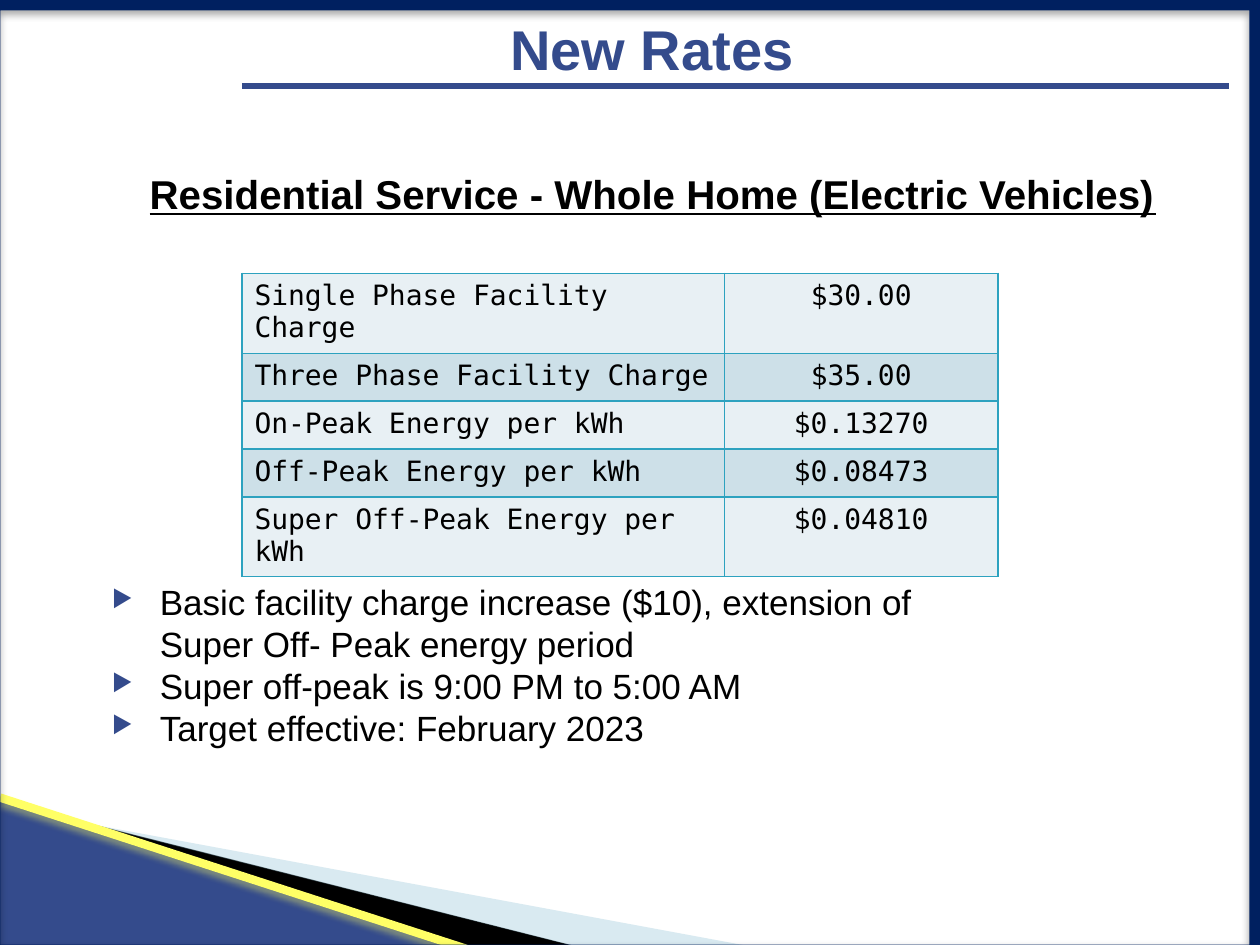
from pptx import Presentation
from pptx.dml.color import RGBColor
from pptx.enum.shapes import MSO_CONNECTOR, MSO_SHAPE
from pptx.enum.text import MSO_ANCHOR, PP_ALIGN
from pptx.oxml import parse_xml
from pptx.oxml.ns import qn
from pptx.util import Inches, Pt

STRAIGHT = MSO_CONNECTOR.STRAIGHT
TRIANGLE, FRAME = MSO_SHAPE.RIGHT_TRIANGLE, MSO_SHAPE.FRAME
MIDDLE = MSO_ANCHOR.MIDDLE
LEFT, CENTER = PP_ALIGN.LEFT, PP_ALIGN.CENTER

BLACK = RGBColor(0x00, 0x00, 0x00)
BLUE = RGBColor(0x34, 0x4B, 0x8C)
NAVY = RGBColor(0x00, 0x20, 0x60)
PALE_BLUE = RGBColor(0xA0, 0xCB, 0xDC)
YELLOW = RGBColor(0xFF, 0xFF, 0x66)
TEAL = RGBColor(0x2D, 0xA2, 0xBF)
BANDS = RGBColor(0xE8, 0xF0, 0xF4), RGBColor(0xCD, 0xE0, 0xE8)

BODY_FONT, TABLE_FONT = "Arial", "DejaVu Sans Mono"
NAMESPACE = 'xmlns:a="http://schemas.openxmlformats.org/drawingml/2006/main"'

RATES = [
    ("Single Phase Facility Charge", "$30.00"),
    ("Three Phase Facility Charge", "$35.00"),
    ("On-Peak Energy per kWh", "$0.13270"),
    ("Off-Peak Energy per kWh", "$0.08473"),
    ("Super Off-Peak Energy per kWh", "$0.04810"),
]
NOTES = [
    "Basic facility charge increase ($10), extension of Super Off- Peak energy period",
    "Super off-peak is 9:00 PM to 5:00 AM",
    "Target effective: February 2023",
]


class SlideBuilder:
    """Draws styled elements on the current slide."""

    def __init__(self, page):
        self.page = page
        self.shapes = page.shapes

    def style_text(self, paragraph, size, color=BLACK, font=BODY_FONT, align=LEFT, bold=False):
        paragraph.alignment = align
        for span in paragraph.runs:
            span.font.name = font
            span.font.size = Pt(size)
            span.font.bold = bold
            span.font.color.rgb = color

    def effects(self, element, color=None, alpha=0):
        properties = element._element.spPr
        for old in properties.findall(qn("a:effectLst")):
            properties.remove(old)
        shadow = "" if color is None else (
            f'<a:outerShdw blurRad="{Pt(4)}" dist="{Pt(3)}" dir="5400000" rotWithShape="0">'
            f'<a:srgbClr val="{color}"><a:alpha val="{alpha * 1000}"/></a:srgbClr></a:outerShdw>')
        properties.append(parse_xml(f"<a:effectLst {NAMESPACE}>{shadow}</a:effectLst>"))

    def paint(self, shape, color, alpha=None):
        shape.fill.solid()
        shape.fill.fore_color.rgb = color
        shape.line.fill.background()
        shape.shadow.inherit = False
        if alpha is not None:
            tint = shape._element.spPr.find(qn("a:solidFill"))[0]
            tint.append(parse_xml(f'<a:alpha {NAMESPACE} val="{alpha * 1000}"/>'))

    def polygon(self, points, color, alpha=None):
        start, *rest = [(Inches(x), Inches(y)) for x, y in points]
        builder = self.shapes.build_freeform(*start)
        builder.add_line_segments(rest, close=True)
        self.paint(builder.convert_to_shape(), color, alpha)

    def shape(self, kind, left, top, width, height, color):
        shape = self.shapes.add_shape(
            kind, Inches(left), Inches(top), Inches(width), Inches(height))
        self.paint(shape, color)
        return shape

    def line(self, start, end, color, width):
        line = self.shapes.add_connector(STRAIGHT, *map(Inches, start + end))
        line.line.color.rgb = color
        line.line.width = Pt(width)
        self.effects(line)
        return line

    def title(self, text, left, top, width, height):
        box = self.shapes.title
        box.left, box.top = Inches(left), Inches(top)
        box.width, box.height = Inches(width), Inches(height)
        box.text_frame.text = text
        box.text_frame.vertical_anchor = MIDDLE
        self.style_text(box.text_frame.paragraphs[0], 32, BLUE, align=CENTER, bold=True)

    def text_box(self, text, left, top, width, height):
        box = self.shapes.add_textbox(
            Inches(left), Inches(top), Inches(width), Inches(height))
        box.text_frame.word_wrap = True
        box.text_frame.text = text
        return box.text_frame

    def heading(self, text, left, top, width, height):
        frame = self.text_box(text, left, top, width, height)
        frame.vertical_anchor = MIDDLE
        paragraph = frame.paragraphs[0]
        self.style_text(paragraph, 23, align=CENTER, bold=True)
        paragraph.runs[0].font.underline = True

    def bullets(self, items, left, top, width, height):
        frame = self.text_box("\n".join(items), left, top, width, height)
        for paragraph in frame.paragraphs:
            properties = paragraph._p.get_or_add_pPr()
            properties.set("marL", str(Inches(0.38)))
            properties.set("indent", str(-Inches(0.38)))
            for bullet in (f'<a:buClr {NAMESPACE}><a:srgbClr val="{BLUE}"/></a:buClr>',
                           f'<a:buSzPct {NAMESPACE} val="68000"/>',
                           f'<a:buChar {NAMESPACE} char="▶"/>'):
                properties.append(parse_xml(bullet))
            self.style_text(paragraph, 20)

    def border(self, cell):
        properties = cell._tc.get_or_add_tcPr()
        for index, side in enumerate(("lnL", "lnR", "lnT", "lnB")):
            properties.insert(index, parse_xml(
                f'<a:{side} {NAMESPACE} w="{Pt(1)}"><a:solidFill>'
                f'<a:srgbClr val="{TEAL}"/></a:solidFill></a:{side}>'))

    def table(self, rows, left, top, widths, row_height):
        table = self.shapes.add_table(
            len(rows), len(widths), Inches(left), Inches(top),
            Inches(sum(widths)), Inches(row_height * len(rows))).table
        table.first_row = table.horz_banding = False
        for column, width in zip(table.columns, widths):
            column.width = Inches(width)
        for row_index, values in enumerate(rows):
            table.rows[row_index].height = Inches(row_height)
            for cell, value, align in zip(table.rows[row_index].cells, values, (LEFT, CENTER)):
                cell.text_frame.text = value
                cell.fill.solid()
                cell.fill.fore_color.rgb = BANDS[row_index % 2]
                self.border(cell)
                self.style_text(cell.text_frame.paragraphs[0], 16, font=TABLE_FONT, align=align)


def main():
    deck = Presentation()
    deck.slide_width, deck.slide_height = Inches(10), Inches(7.5)
    slide = SlideBuilder(deck.slides.add_slide(deck.slide_layouts[5]))

    slide.polygon([(0.53, 6.49), (4.57, 7.51), (3.72, 7.52), (0.54, 6.5)], BLACK)
    slide.polygon([(0.55, 6.51), (5.95, 7.51), (4.56, 7.51), (0.55, 6.5)], PALE_BLUE, 40)
    slide.shape(TRIANGLE, -0.01, 6.33, 3.72, 1.18, BLUE)
    slide.line((1.92, 0.68), (9.75, 0.68), BLUE, 3.4)
    stripe = slide.line((0, 6.33), (3.7, 7.53), YELLOW, 4.75)
    slide.effects(stripe, YELLOW, 40)
    frame = slide.shape(FRAME, -0.08, 0, 10.08, 7.58, NAVY)
    frame.adjustments[0] = 0.011
    slide.effects(frame, BLACK, 35)

    slide.title("New Rates", 1.55, 0.05, 7.25, 0.67)
    slide.heading("Residential Service - Whole Home (Electric Vehicles)", 0.64, 1.3, 9.08, 0.47)
    slide.table(RATES, 1.92, 2.17, (3.83, 2.17), 0.38)
    slide.bullets(NOTES, 0.79, 4.56, 7.17, 1.78)

    deck.save("out.pptx")


if __name__ == "__main__":
    main()
